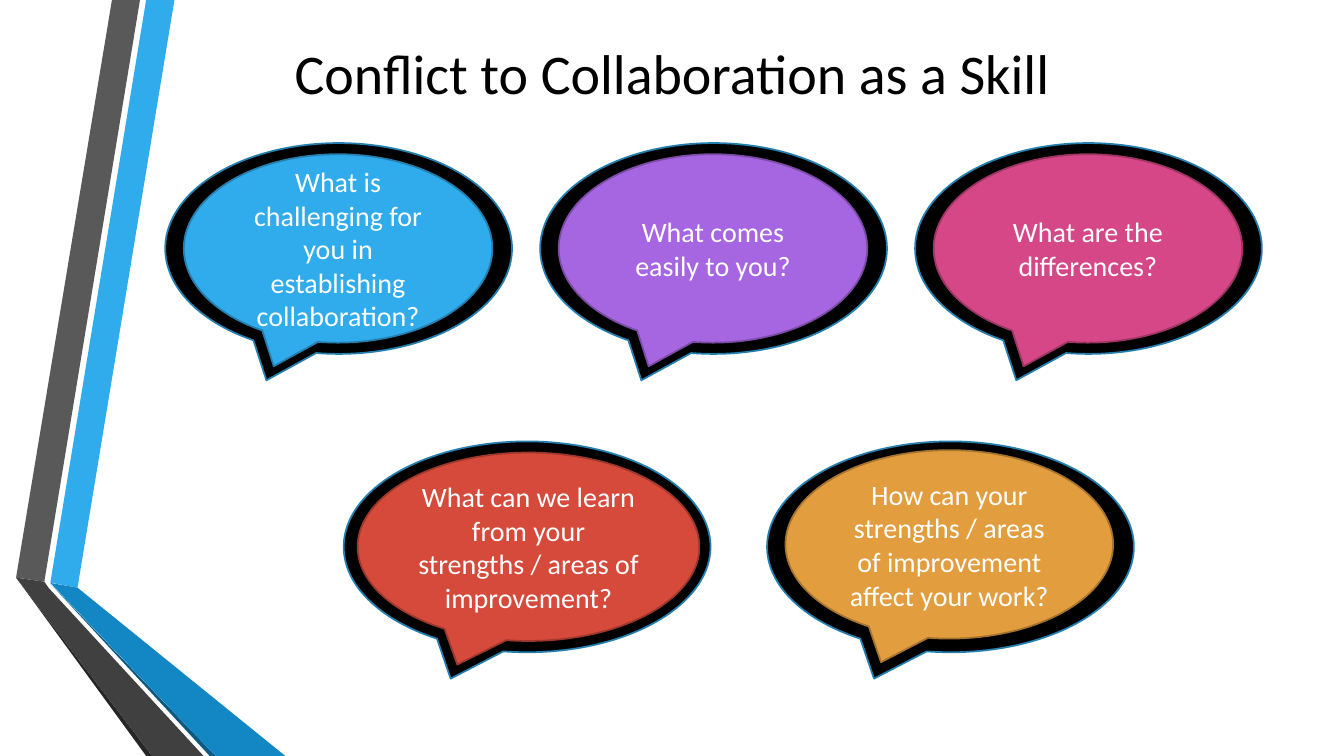
from pptx import Presentation
from pptx.dml.color import RGBColor
from pptx.enum.shapes import MSO_SHAPE
from pptx.enum.text import MSO_ANCHOR, PP_ALIGN
from pptx.util import Pt

CALLOUT = MSO_SHAPE.OVAL_CALLOUT
MIDDLE = MSO_ANCHOR.MIDDLE
CENTER = PP_ALIGN.CENTER

FONT = "Calibri"
RIM_LINE = "247FAF"

RIBBON = [
    ("30ACEC", [(36, 416.2), (55.4, 419.8), (124.6, 0), (104.4, 0)]),
    ("595959", [(100, 0), (80, 0), (11.5, 412.6), (31.7, 415.5)]),
    ("262626", [(11.5, 412.6), (104.4, 540), (108.7, 540)]),
    ("0C5A82", [(36, 416.9), (149.8, 540), (154, 540)]),
    ("1287C3", [(36, 416.4), (154, 540), (203.8, 540), (55.4, 419.8)]),
    ("404040", [(145.4, 540), (34.6, 419.8), (31.7, 415.5), (11.5, 412.6), (108.7, 540)]),
]

TOP_QUESTIONS = [
    ("What is challenging for you in establishing collaboration?", "30ACEC", "247FAF"),
    ("What comes easily to you?", "A666E1", "7B4BA6"),
    ("What are the differences?", "D64787", "9E3564"),
]
LEARN_QUESTION = (
    "What can we learn from your strengths / areas of improvement?", "D64A3B", "9E372C")
WORK_QUESTION = (
    "How can your strengths / areas of improvement affect your work?", "E29D3E", "A7742E")


def rgb(value):
    return RGBColor.from_string(value)


def style_text(frame, text, size, color):
    frame.text = text
    frame.word_wrap = True
    frame.vertical_anchor = MIDDLE
    paragraph = frame.paragraphs[0]
    paragraph.alignment = CENTER
    paragraph.font.name = FONT
    paragraph.font.size = Pt(size)
    paragraph.font.color.rgb = rgb(color)


def add_ribbon(slide, left, top):
    for color, corners in RIBBON:
        points = [(Pt(left + x), Pt(top + y)) for x, y in corners]
        builder = slide.shapes.build_freeform(*points[0])
        builder.add_line_segments(points[1:], close=True)
        band = builder.convert_to_shape()
        band.shadow.inherit = False
        band.fill.solid()
        band.fill.fore_color.rgb = rgb(color)
        band.line.fill.background()


def add_title(slide, left, top, width, height):
    title = slide.shapes.title
    title.left, title.top = Pt(left), Pt(top)
    title.width, title.height = Pt(width), Pt(height)
    style_text(title.text_frame, "Conflict to Collaboration as a Skill", 40, "000000")


def add_bubble(slide, left, top, width, height, fill, line):
    bubble = slide.shapes.add_shape(CALLOUT, Pt(left), Pt(top), Pt(width), Pt(height))
    bubble.shadow.inherit = False
    bubble.fill.solid()
    bubble.fill.fore_color.rgb = rgb(fill)
    bubble.line.color.rgb = rgb(line)
    bubble.line.width = Pt(1.25)
    return bubble


def add_question(slide, left, top, width, question, inset, drop, inner_width):
    text, fill, line = question
    add_bubble(slide, left, top, width, 150.6, "000000", RIM_LINE)
    face = add_bubble(slide, left + inset, top + drop, inner_width, 134.6, fill, line)
    style_text(face.text_frame, text, 20, "FFFFFF")


def add_questions(slide, left, top):
    for column, question in enumerate(TOP_QUESTIONS):
        add_question(slide, left + column * 267.8, top, 247.7, question, 13.2, 8, 220.4)
    second_row = top + 213.1
    add_question(slide, left + 127.4, second_row, 262, LEARN_QUESTION, 10, 8, 244.1)
    add_question(slide, left + 429.8, second_row, 262, WORK_QUESTION, 13.2, 6.3, 234)


def main():
    deck = Presentation()
    deck.slide_width, deck.slide_height = Pt(960), Pt(540)
    slide = deck.slides.add_slide(deck.slide_layouts[5])
    slide.background.fill.solid()
    slide.background.fill.fore_color.rgb = rgb("FFFFFF")
    add_ribbon(slide, 0, 0)
    add_title(slide, 0, 20.2, 960, 62)
    add_questions(slide, 118.1, 102.2)
    deck.save("out.pptx")


if __name__ == "__main__":
    main()
